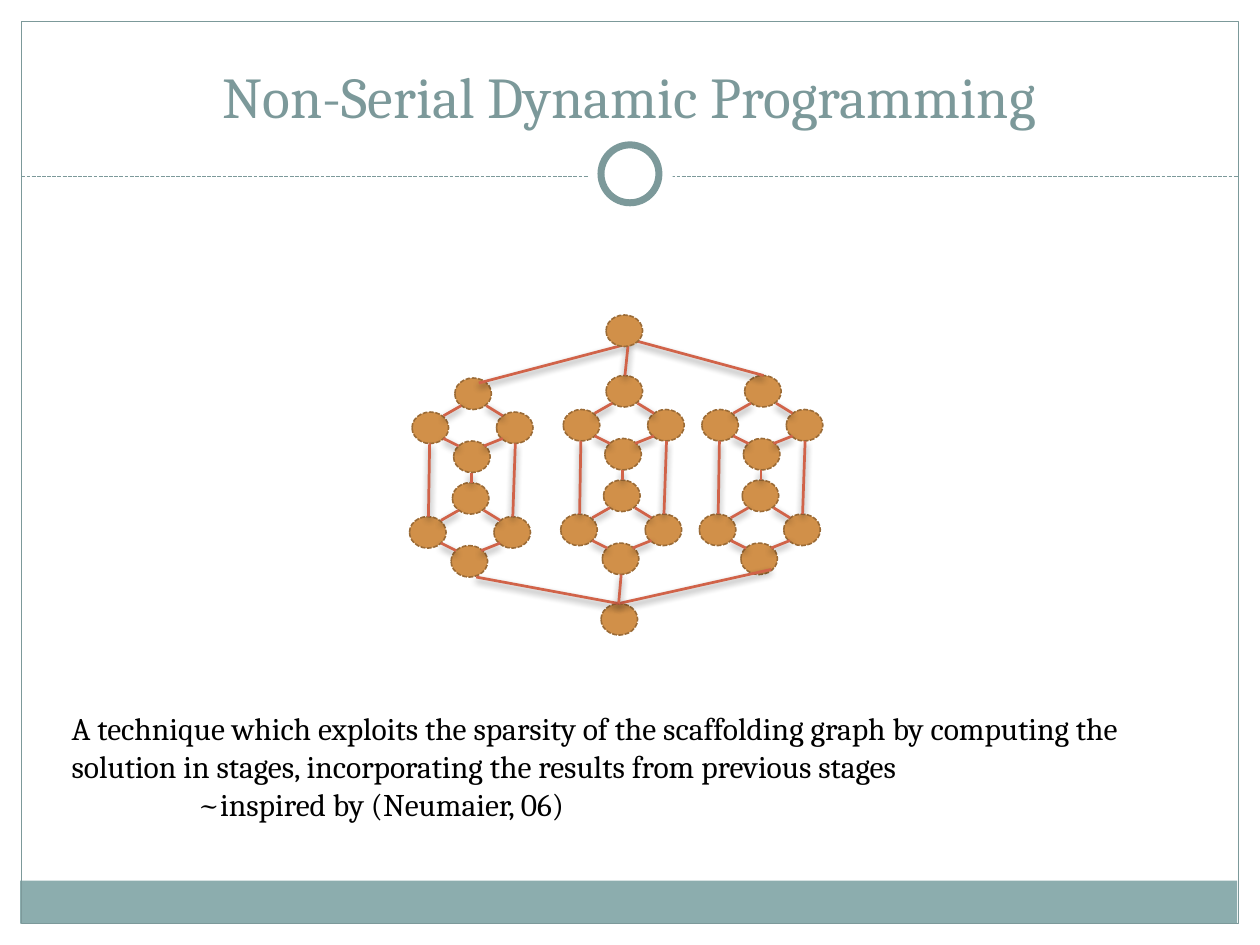
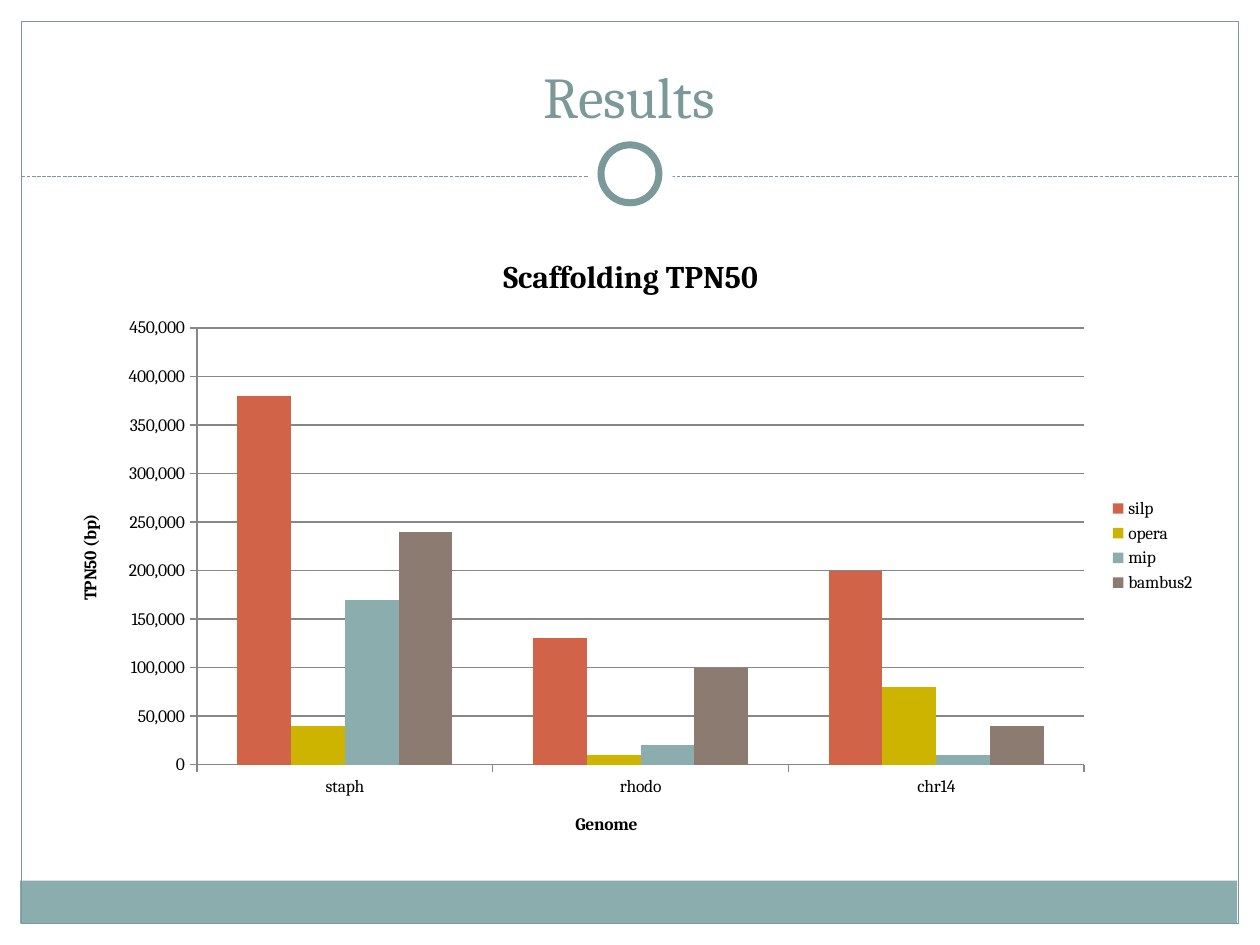
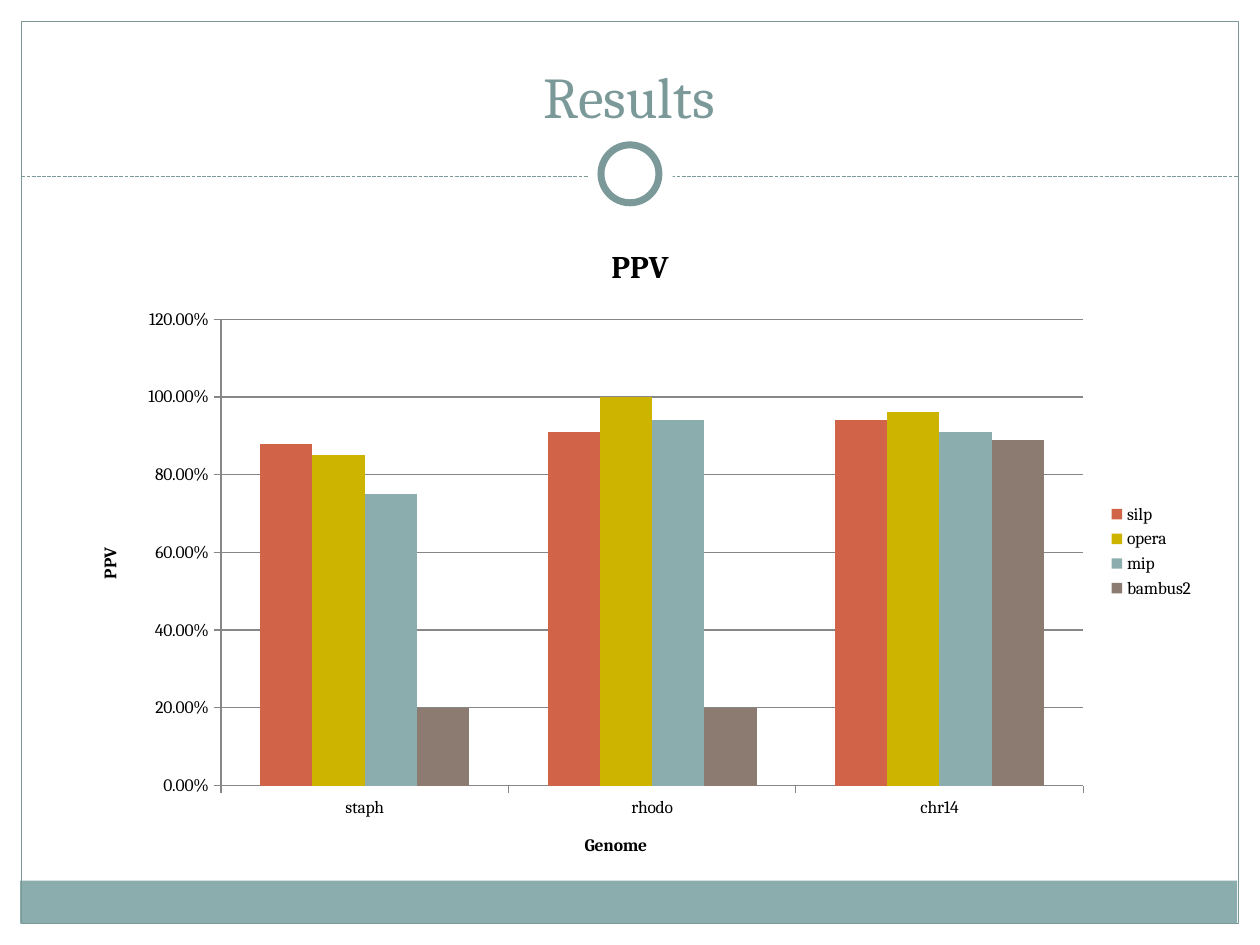
from lxml.etree import SubElement
from pptx import Presentation
from pptx.chart.data import CategoryChartData as ChartData
from pptx.dml.color import RGBColor
from pptx.enum.chart import XL_CHART_TYPE as ChartType
from pptx.enum.chart import XL_LEGEND_POSITION as LegendPosition
from pptx.enum.chart import XL_TICK_MARK as TickMark
from pptx.enum.dml import MSO_LINE as Dash
from pptx.enum.shapes import MSO_CONNECTOR as Connector
from pptx.enum.shapes import MSO_SHAPE as Shape
from pptx.enum.text import MSO_ANCHOR as Anchor
from pptx.enum.text import PP_ALIGN as Align
from pptx.oxml.ns import qn
from pptx.util import Inches, Pt

FONT = "Cambria"
WHITE, BLACK, GREY = "FFFFFF", "000000", "878787"
TEAL, BAND = "7C999A", "8CADAE"
NODE_FILL, NODE_LINE, EDGE = "D19049", "9B6B36", "D16349"
SERIES_COLORS = ["D16349", "CCB400", "8CADAE", "8C7B70"]

# Page margins: top, left, right
MARGINS = [(0, 0, 10, 1.52), (0, 0, 0.17, 7.5), (9.83, 0, 0.17, 7.5)]

# Scaffolding graph: node size and places inside one cluster
NODE_W, NODE_H = 0.29, 0.25
DIAMOND_NODES = [(0, 0), (0.33, 0.23), (0.67, 0), (0.34, -0.27)]
DIAMOND_EDGES = [
    ((0.72, 0.21), (0.57, 0.27)),
    ((0.25, 0.21), (0.37, 0.27)),
    ((0.25, 0.03), (0.39, -0.05)),
    ((0.72, 0.03), (0.59, -0.05)),
]
LOWER_DIAMOND = (-0.02, 0.83)
RAILS = [
    ((0.82, 0.25), (0.8, 0.83)),
    ((0.13, 0.83), (0.14, 0.25)),
    ((0.47, 0.48), (0.47, 0.56)),
]
CLUSTERS = [(3.27, 3.27), (4.47, 3.25), (5.57, 3.25)]
SOURCE_EDGES = [
    ((3.8, 3.04), (4.98, 2.73)),
    ((6.06, 2.98), (4.99, 2.69)),
    ((4.99, 2.69), (4.96, 2.98)),
]
SINK = (4.91, 4.79)
SINK_EDGES = [((3.78, 4.58), SINK), ((6.12, 4.52), SINK), (SINK, (4.93, 4.56))]


def rgb(color):
    return RGBColor.from_string(color)


def write(para, text, size=10, color=BLACK, bold=False, align=None, tab=None):
    """Fill a paragraph; a vertical tab in the text is a line break."""
    para.text = text
    para.alignment = align
    if tab:
        stops = SubElement(para._p.get_or_add_pPr(), qn("a:tabLst"))
        SubElement(stops, qn("a:tab"), pos=str(Inches(tab)), algn="l")
    for span in para.runs:
        span.font.name = FONT
        span.font.size = Pt(size)
        span.font.bold = bold
        span.font.color.rgb = rgb(color)


def style_line(line, color, width, dash=None):
    line.color.rgb = rgb(color)
    line.width = Pt(width)
    if dash:
        line.dash_style = dash


def add_figure(shapes, kind, at, fill=None, line=None):
    figure = shapes.add_shape(kind, *map(Inches, at))
    figure.shadow.inherit = False
    if fill:
        figure.fill.solid()
        figure.fill.fore_color.rgb = rgb(fill)
    else:
        figure.fill.background()
    if line:
        style_line(figure.line, *line)
    else:
        figure.line.fill.background()


def add_line(shapes, start, end, color, width, dash=None, shadow=False):
    connector = shapes.add_connector(Connector.STRAIGHT, *map(Inches, start + end))
    style_line(connector.line, color, width, dash)
    effects = SubElement(connector.element.spPr, qn("a:effectLst"))
    if shadow:
        outer = SubElement(effects, qn("a:outerShdw"), blurRad=str(Pt(4)),
                           dist=str(Pt(2)), dir="5400000", rotWithShape="0")
        tint = SubElement(outer, qn("a:srgbClr"), val=BLACK)
        SubElement(tint, qn("a:alpha"), val="45000")


def add_text(page, at, paragraphs, anchor=Anchor.TOP, **style):
    frame = page.shapes.add_textbox(*map(Inches, at)).text_frame
    frame.word_wrap = True
    frame.vertical_anchor = anchor
    for index, text in enumerate(paragraphs):
        para = frame.add_paragraph() if index else frame.paragraphs[0]
        write(para, text, **style)


# Shared page: margins, band, border, divider with ring, title
def add_page(deck, title):
    page = deck.slides.add_slide(deck.slide_layouts[6])
    shapes = page.shapes
    for margin in MARGINS:
        add_figure(shapes, Shape.RECTANGLE, margin, fill=WHITE)
    add_figure(shapes, Shape.RECTANGLE, (0.16, 6.99, 9.66, 0.34), fill=BAND)
    add_figure(shapes, Shape.RECTANGLE, (0.17, 0.17, 9.66, 7.16), line=(TEAL, 0.75))
    add_line(shapes, (0.17, 1.4), (9.83, 1.4), TEAL, 0.75, Dash.SQUARE_DOT)
    add_figure(shapes, Shape.OVAL, (4.67, 1.05, 0.67, 0.67), fill=WHITE)
    add_figure(shapes, Shape.OVAL, (4.77, 1.15, 0.46, 0.46), fill=WHITE, line=(TEAL, 4))
    add_text(page, (0.33, 0.25, 9.33, 0.83), [title], Anchor.BOTTOM,
             size=33, color=TEAL, align=Align.CENTER)
    return page


# Graph parts
def shift(point, origin):
    return point[0] + origin[0], point[1] + origin[1]


def add_node(shapes, corner):
    add_figure(shapes, Shape.OVAL, corner + (NODE_W, NODE_H), fill=NODE_FILL,
               line=(NODE_LINE, 0.9, Dash.SQUARE_DOT))


def add_edges(shapes, edges, origin=(0, 0)):
    for start, end in edges:
        add_line(shapes, shift(start, origin), shift(end, origin), EDGE, 1.57, shadow=True)


def add_cluster(page, origin):
    shapes = page.shapes.add_group_shape().shapes
    for corner in (origin, shift(LOWER_DIAMOND, origin)):
        for node in DIAMOND_NODES:
            add_node(shapes, shift(node, corner))
        add_edges(shapes, DIAMOND_EDGES, corner)
    add_edges(shapes, RAILS, origin)


def add_graph(page):
    for origin in CLUSTERS:
        add_cluster(page, origin)
    add_edges(page.shapes, SOURCE_EDGES)
    add_node(page.shapes, (4.77, 4.79))
    add_edges(page.shapes, SINK_EDGES)
    add_node(page.shapes, (4.81, 2.5))


# Column chart by genome
def add_columns(page, at, title, value_title, number_format, top, step, series):
    data = ChartData(number_format=number_format)
    data.categories = ["staph", "rhodo", "chr14"]
    for name, values in series.items():
        data.add_series(name, values)
    chart = page.shapes.add_chart(ChartType.COLUMN_CLUSTERED, *map(Inches, at), data).chart
    chart.font.name = FONT
    chart.font.size = Pt(10)
    chart.font.color.rgb = rgb(BLACK)
    write(chart.chart_title.text_frame.paragraphs[0], title, size=18, bold=True)
    chart.chart_title.include_in_layout = False
    chart.has_legend = True
    chart.legend.position = LegendPosition.RIGHT
    chart.legend.include_in_layout = False

    for axis, name in ((chart.category_axis, "Genome"), (chart.value_axis, value_title)):
        write(axis.axis_title.text_frame.paragraphs[0], name, bold=True)
        axis.major_tick_mark = TickMark.OUTSIDE
        axis.minor_tick_mark = TickMark.NONE
        style_line(axis.format.line, GREY, 0.75)
    values_axis = chart.value_axis
    values_axis.minimum_scale, values_axis.maximum_scale = 0, top
    values_axis.major_unit = step
    values_axis.tick_labels.number_format = number_format
    values_axis.tick_labels.number_format_is_linked = False
    style_line(values_axis.major_gridlines.format.line, GREY, 0.75)

    plot = chart.plots[0]
    plot.gap_width = 150
    plot.vary_by_categories = False
    for column, color in zip(plot.series, SERIES_COLORS):
        column.format.fill.solid()
        column.format.fill.fore_color.rgb = rgb(color)


def main():
    deck = Presentation()
    deck.slide_width, deck.slide_height = Inches(10), Inches(7.5)

    # Method
    page = add_page(deck, "Non-Serial Dynamic Programming")
    add_graph(page)
    add_text(page, (0.47, 5.58, 9.32, 1.01), [
        "A technique which exploits the sparsity of the scaffolding graph by computing the",
        "solution in stages, incorporating the results from previous stages"
        "\v\t~inspired by (Neumaier, 06)",
    ], size=18, tab=1)

    # Scaffold length
    page = add_page(deck, "Results")
    add_columns(page, (0.42, 1.83, 9.17, 5), "Scaffolding TPN50", "TPN50 (bp)",
                "#,##0", 450000, 50000, {
                    "silp": (380000, 130000, 200000),
                    "opera": (40000, 10000, 80000),
                    "mip": (170000, 20000, 10000),
                    "bambus2": (240000, 100000, 40000),
                })

    # Predictive value
    page = add_page(deck, "Results")
    add_columns(page, (0.58, 1.75, 9, 5.25), "PPV", "PPV", "0.00%", 1.2, 0.2, {
        "silp": (0.88, 0.91, 0.94),
        "opera": (0.85, 1, 0.96),
        "mip": (0.75, 0.94, 0.91),
        "bambus2": (0.2, 0.2, 0.89),
    })

    deck.save("out.pptx")


if __name__ == "__main__":
    main()
